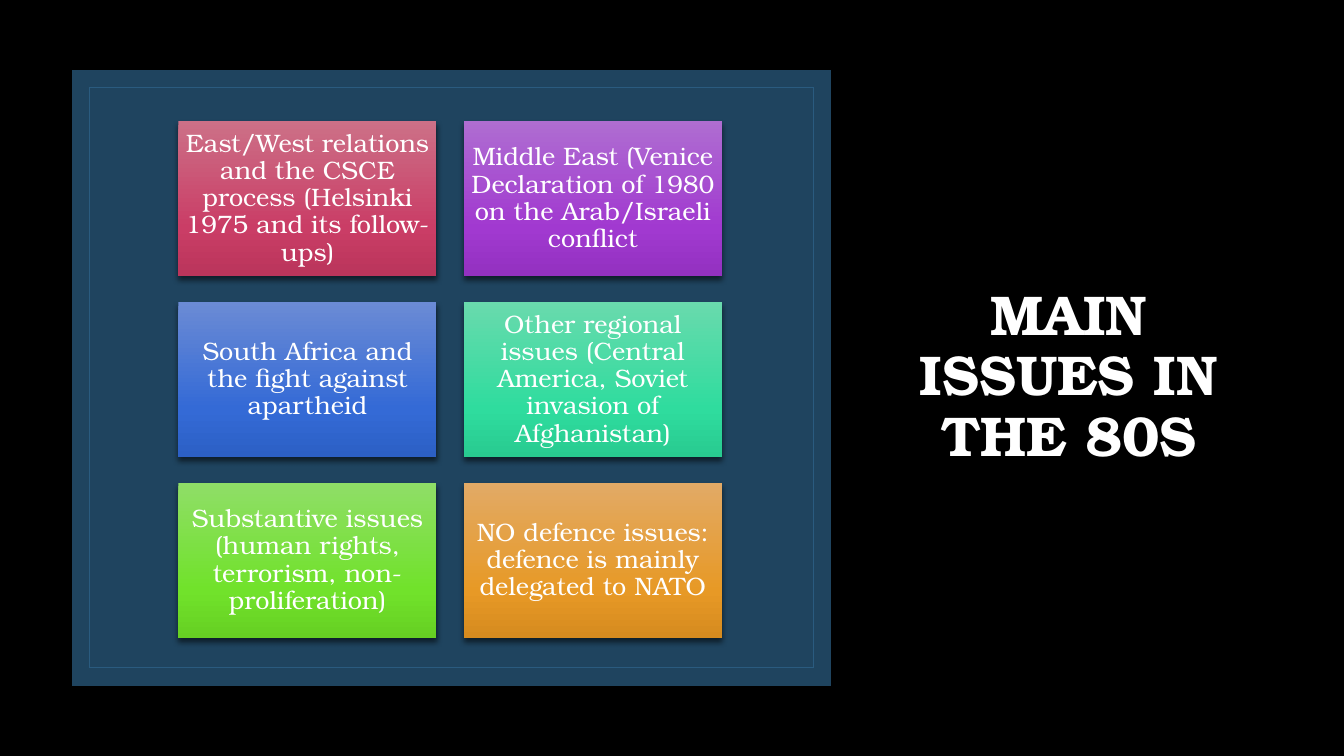
from copy import deepcopy
from dataclasses import dataclass

from lxml import etree
from pptx import Presentation
from pptx import util as u
from pptx.dml.color import RGBColor
from pptx.enum import shapes, text
from pptx.oxml.ns import qn

FONT = "TeX Gyre Bonum"
COLORS = {
    "background": "000000",
    "text": "FFFFFF",
    "panel": "1F445F",
    "frame": "2A5B7F",
    "shadow": "000000",
}
GRADIENT_POSITIONS = (0, 0.69, 1)

# Card grid, in inches
COLUMNS = 2
GRID_LEFT, GRID_TOP = 1.77, 1.2
CARD_WIDTH, CARD_HEIGHT = 2.56, 1.54
COLUMN_STEP, ROW_STEP = 2.83, 1.795


@dataclass(frozen=True)
class Card:
    wording: str
    gradient: tuple[str, str, str]


@dataclass(frozen=True)
class Shadow:
    opacity: int
    blur: float
    distance: float


CARDS = [
    Card("East/West relations and the CSCE process (Helsinki 1975 and its follow-ups)",
         ("CC7087", "CA3D66", "BA355B")),
    Card("Middle East (Venice Declaration of 1980 on the Arab/Israeli conflict",
         ("AF6DD1", "A139D0", "9331C0")),
    Card("South Africa and the fight against apartheid",
         ("6B8BD5", "346AD6", "2C60C5")),
    Card("Other regional issues (Central America, Soviet invasion of Afghanistan)",
         ("69DAAD", "2FDC9E", "28CB90")),
    Card("Substantive issues (human rights, terrorism, non-proliferation)",
         ("8FDE67", "71E22B", "66D023")),
    Card("NO defence issues: defence is mainly delegated to NATO",
         ("E2AA66", "E79926", "D68B1F")),
]
PANEL_SHADOW = Shadow(opacity=40, blur=4.3, distance=1.4)
CARD_SHADOW = Shadow(opacity=54, blur=4, distance=3)


def rgb(name: str) -> RGBColor:
    return RGBColor.from_string(COLORS[name])


def add_rectangle(slide, left: float, top: float, width: float, height: float):
    shape = slide.shapes.add_shape(
        shapes.MSO_SHAPE.RECTANGLE,
        u.Inches(left), u.Inches(top), u.Inches(width), u.Inches(height))
    shape.shadow.inherit = False
    return shape


def set_outline(shape, color: str, width: float) -> None:
    shape.line.color.rgb = rgb(color)
    shape.line.width = u.Pt(width)
    outline = shape.element.spPr.find(qn("a:ln"))
    etree.SubElement(outline, qn("a:miter"), lim="800000")


def add_shadow(shape, shadow: Shadow) -> None:
    effects = shape.element.spPr.find(qn("a:effectLst"))
    outer = etree.SubElement(
        effects, qn("a:outerShdw"), blurRad=str(u.Pt(shadow.blur)),
        dist=str(u.Pt(shadow.distance)), dir="5400000", algn="ctr", rotWithShape="0")
    color = etree.SubElement(outer, qn("a:srgbClr"), val=COLORS["shadow"])
    etree.SubElement(color, qn("a:alpha"), val=str(shadow.opacity * 1000))


def fill_gradient(shape, colors: tuple[str, str, str]) -> None:
    shape.fill.gradient()
    shape.fill.gradient_angle = 270
    stop_list = shape.element.spPr.find(".//" + qn("a:gsLst"))
    stop_list.append(deepcopy(stop_list[-1]))
    for stop, position, color in zip(shape.fill.gradient_stops, GRADIENT_POSITIONS, colors):
        stop.position = position
        stop.color.rgb = RGBColor.from_string(color)


def write_text(shape, wording: str, size: float, bold: bool = False) -> None:
    frame = shape.text_frame
    frame.word_wrap = True
    frame.vertical_anchor = text.MSO_ANCHOR.MIDDLE
    paragraph = frame.paragraphs[0]
    paragraph.text = wording
    paragraph.alignment = text.PP_ALIGN.CENTER
    paragraph.line_spacing = 0.9
    paragraph.font.name = FONT
    paragraph.font.size = u.Pt(size)
    paragraph.font.bold = bold
    paragraph.font.color.rgb = rgb("text")


def add_panel(slide) -> None:
    panel = add_rectangle(slide, 0.82, 0.8, 7.32, 5.9)
    panel.fill.solid()
    panel.fill.fore_color.rgb = rgb("panel")
    set_outline(panel, "panel", 15)
    add_shadow(panel, PANEL_SHADOW)

    frame = add_rectangle(slide, 0.89, 0.87, 7.18, 5.75)
    frame.fill.background()
    set_outline(frame, "frame", 1)


def add_card(slide, card: Card, index: int) -> None:
    row, column = divmod(index, COLUMNS)
    shape = add_rectangle(
        slide, GRID_LEFT + column * COLUMN_STEP, GRID_TOP + row * ROW_STEP,
        CARD_WIDTH, CARD_HEIGHT)
    fill_gradient(shape, card.gradient)
    shape.line.fill.background()
    add_shadow(shape, CARD_SHADOW)
    frame = shape.text_frame
    frame.margin_left = frame.margin_right = u.Inches(0.06)
    frame.margin_top = frame.margin_bottom = u.Inches(0.07)
    write_text(shape, card.wording, 18)


def main() -> None:
    presentation = Presentation()
    presentation.slide_width = u.Inches(13.33)
    presentation.slide_height = u.Inches(7.5)
    slide = presentation.slides.add_slide(presentation.slide_layouts[6])
    slide.background.fill.solid()
    slide.background.fill.fore_color.rgb = rgb("background")

    # Title
    title = slide.shapes.add_textbox(
        u.Inches(8.61), u.Inches(0.69), u.Inches(3.98), u.Inches(6.11))
    write_text(title, "MAIN ISSUES IN THE 80S", 40, bold=True)

    # Panel with its cards
    add_panel(slide)
    for index, card in enumerate(CARDS):
        add_card(slide, card, index)

    presentation.save("out.pptx")


if __name__ == "__main__":
    main()
